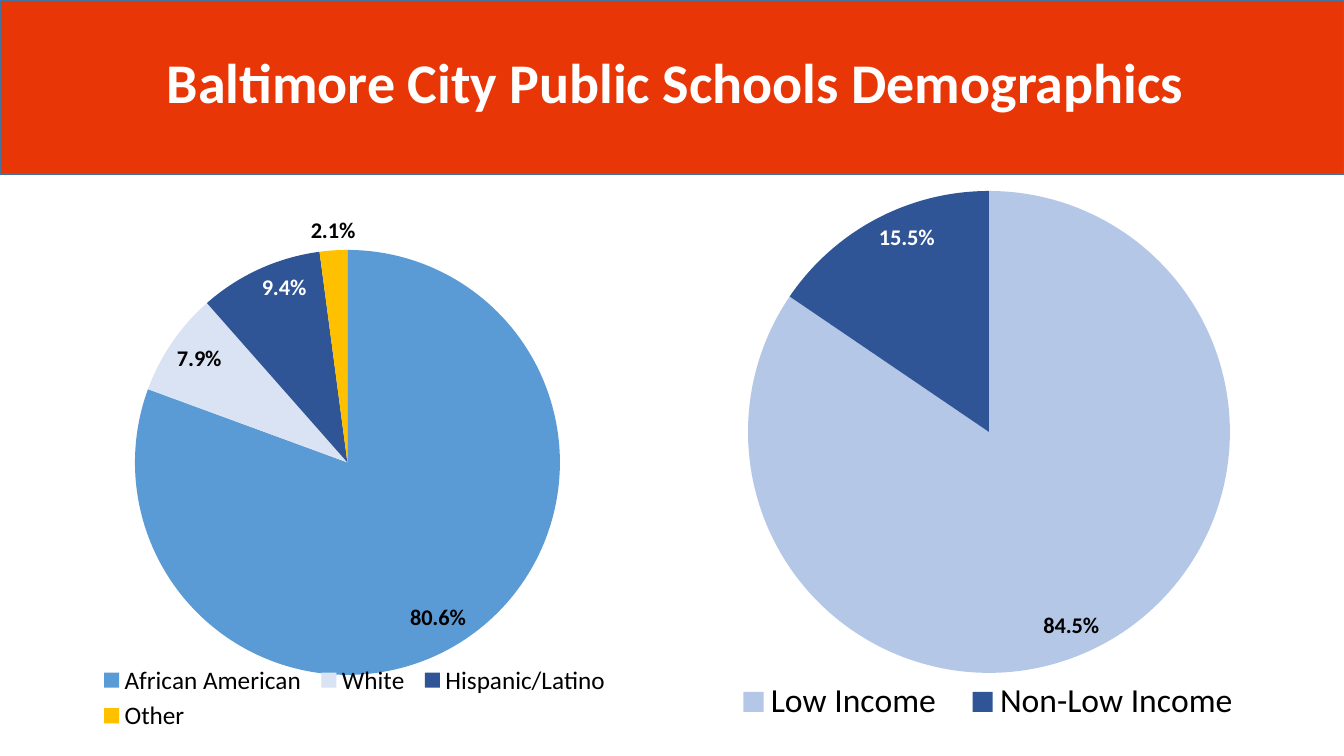
from lxml import etree
from pptx import Presentation
from pptx.chart.data import CategoryChartData
from pptx.dml.color import RGBColor
from pptx.enum.chart import XL_CHART_TYPE, XL_LABEL_POSITION, XL_LEGEND_POSITION
from pptx.enum.shapes import MSO_SHAPE
from pptx.enum.text import MSO_ANCHOR, PP_ALIGN
from pptx.oxml.ns import qn
from pptx.util import Emu, Pt

PIE = XL_CHART_TYPE.PIE
INSIDE = XL_LABEL_POSITION.INSIDE_END
OUTSIDE = XL_LABEL_POSITION.OUTSIDE_END
BOTTOM = XL_LEGEND_POSITION.BOTTOM
RECTANGLE = MSO_SHAPE.RECTANGLE
MIDDLE = MSO_ANCHOR.MIDDLE
CENTER = PP_ALIGN.CENTER

EMU_PER_PX = 914400 / 100.8
FONT = "Calibri"
BLACK = "000000"
WHITE = "FFFFFF"
NAVY = "2F5597"

INCOME = {
    "box": (649, 177, 679, 572),
    "pie": (748, 191, 482, 482),
    "legend": (718, 680, 540, 44),
    "legend_size": 24,
    "slices": [
        ("Low Income", 0.845, "B4C7E7", BLACK, INSIDE),
        ("Non-Low Income", 0.155, NAVY, WHITE, INSIDE),
    ],
}
ETHNICITY = {
    "box": (-4, 204, 671, 534),
    "pie": (135, 250, 425, 425),
    "legend": (92, 660, 525, 76),
    "legend_size": 18,
    "slices": [
        ("African American", 0.806, "5B9BD5", BLACK, INSIDE),
        ("White", 0.079, "DAE3F3", BLACK, INSIDE),
        ("Hispanic/Latino", 0.094, NAVY, WHITE, INSIDE),
        ("Other", 0.021, "FFC000", BLACK, OUTSIDE),
    ],
}


def px(length):
    return Emu(round(length * EMU_PER_PX))


def color(value):
    return RGBColor.from_string(value)


def format_font(font, size, value, bold=False):
    settings = {"name": FONT, "size": Pt(size), "bold": bold}
    for name, setting in settings.items():
        setattr(font, name, setting)
    font.color.rgb = color(value)


def set_layout(parent, index, area, frame, inner=False):
    for old in parent.findall(qn("c:layout")):
        parent.remove(old)
    layout = etree.Element(qn("c:layout"))
    manual = etree.SubElement(layout, qn("c:manualLayout"))
    left, top, width, height = area
    frame_left, frame_top, frame_width, frame_height = frame
    values = {"layoutTarget": "inner"} if inner else {}
    values.update({
        "xMode": "edge",
        "yMode": "edge",
        "x": (left - frame_left) / frame_width,
        "y": (top - frame_top) / frame_height,
        "w": width / frame_width,
        "h": height / frame_height,
    })
    for name, value in values.items():
        etree.SubElement(manual, qn(f"c:{name}")).set("val", str(value))
    parent.insert(index, layout)


def add_banner(page):
    banner = page.shapes.add_shape(RECTANGLE, 0, 0, px(1344), px(174))
    banner.shadow.inherit = False
    banner.fill.solid()
    banner.fill.fore_color.rgb = color("E83606")
    banner.line.color.rgb = color("43739E")
    banner.line.width = Pt(1)
    page.shapes.element.insert(2, banner.element)


def set_title(page, text):
    title = page.shapes.title
    sides = ("left", "top", "width", "height")
    for side, length in zip(sides, (59, 10, 1232, 151)):
        setattr(title, side, px(length))
    title.text_frame.vertical_anchor = MIDDLE
    para = title.text_frame.paragraphs[0]
    para.alignment = CENTER
    para.line_spacing = 0.9
    span = para.add_run()
    span.text = text
    format_font(span.font, 40, WHITE, bold=True)


def add_pie(page, details):
    names, values, *_ = zip(*details["slices"])
    data = CategoryChartData(number_format="0.0%")
    data.categories = names
    data.add_series("Series 1", values)
    box = details["box"]
    chart = page.shapes.add_chart(PIE, *map(px, box), data).chart
    chart.has_title = False
    format_font(chart.font, 18, BLACK)

    chart.has_legend = True
    legend = chart.legend
    legend.position = BOTTOM
    legend.include_in_layout = False
    format_font(legend.font, details["legend_size"], BLACK)

    plot = chart.plots[0]
    plot.vary_by_categories = True
    series = plot.series[0]
    labels = series.data_labels
    label_settings = {
        "show_value": True,
        "show_percentage": False,
        "number_format": "0.0%",
        "number_format_is_linked": False,
        "position": INSIDE,
    }
    for name, setting in label_settings.items():
        setattr(labels, name, setting)
    format_font(labels.font, 16, BLACK, bold=True)
    for index, (_, _, fill, ink, position) in enumerate(details["slices"]):
        point = series.points[index]
        point.format.fill.solid()
        point.format.fill.fore_color.rgb = color(fill)
        format_font(point.data_label.font, 16, ink, bold=True)
        point.data_label.position = position

    plot_area = chart.element.find(".//" + qn("c:plotArea"))
    set_layout(plot_area, 0, details["pie"], box, inner=True)
    legend_element = chart.element.find(".//" + qn("c:legend"))
    set_layout(legend_element, 1, details["legend"], box)


def main():
    deck = Presentation()
    deck.slide_width = px(1344)
    deck.slide_height = px(756)
    page = deck.slides.add_slide(deck.slide_layouts[5])
    add_banner(page)
    set_title(page, "Baltimore City Public Schools Demographics")
    for details in (INCOME, ETHNICITY):
        add_pie(page, details)
    deck.save("out.pptx")


if __name__ == "__main__":
    main()
